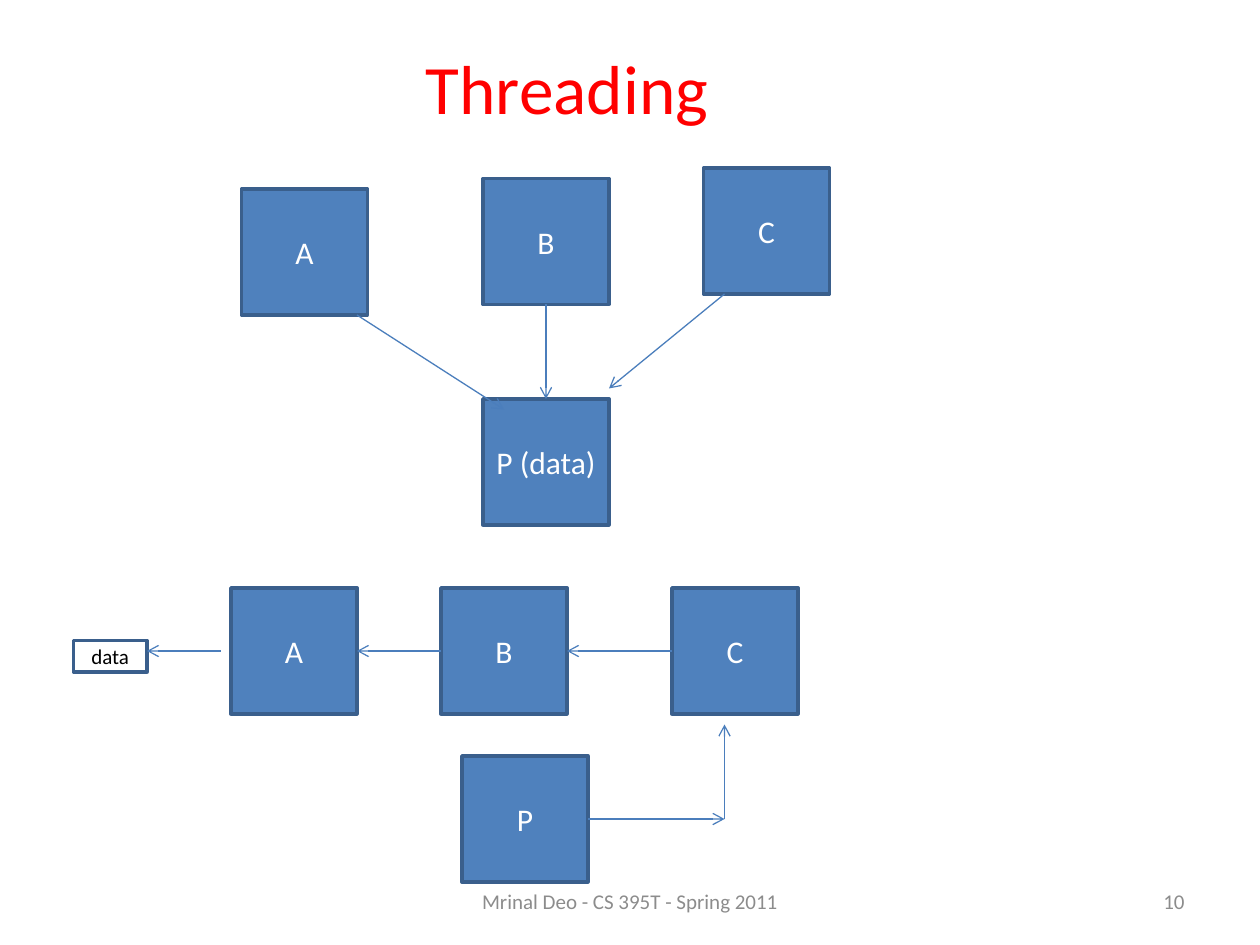
from lxml import etree
from pptx import Presentation
from pptx.dml.color import RGBColor
from pptx.enum import shapes, text
from pptx.oxml import ns
from pptx.util import Pt

LABELS = [
    ("Threading", (36, 21.6, 576, 56), 39.6, "FF0000", text.PP_ALIGN.CENTER),
    ("Mrinal Deo - CS 395T - Spring 2011", (246, 500.4, 228, 28.8), 12, "8C8C8C", text.PP_ALIGN.CENTER),
    ("10", (516, 500.4, 168, 28.8), 12, "8C8C8C", text.PP_ALIGN.RIGHT),
]
SIDE = 72
NODES = [
    ("A", 138, 108), ("B", 276, 102), ("C", 402, 96), ("P (data)", 276, 228),
    ("A", 132, 336), ("B", 252, 336), ("C", 384, 336), ("P", 264, 432),
]
DATA_BOX = (42, 366, 42, 18)
ARROWS = [
    (204, 180, 288, 234), (312, 174, 312, 228), (414, 168, 348, 222),
    (126, 372, 84, 372), (252, 372, 204, 372), (384, 372, 324, 372),
    (336, 468, 414, 468), (414, 468, 414, 414),
]


def color(value):
    return RGBColor.from_string(value)


def write(box, words, size, ink, align):
    frame = box.text_frame
    frame.text = words
    frame.word_wrap = True
    frame.vertical_anchor = text.MSO_ANCHOR.MIDDLE
    para = frame.paragraphs[0]
    para.alignment = align
    font = para.runs[0].font
    font.name, font.size = "Calibri", Pt(size)
    font.color.rgb = color(ink)


def add_label(page, words, place, size, ink, align):
    box = page.shapes.add_textbox(*map(Pt, place))
    write(box, words, size, ink, align)


def add_node(page, words, place, size=18, fill="4F81BD", ink="FFFFFF"):
    box = page.shapes.add_shape(shapes.MSO_SHAPE.RECTANGLE, *map(Pt, place))
    box.shadow.inherit = False
    box.fill.solid()
    box.fill.fore_color.rgb = color(fill)
    box.line.color.rgb = color("3A5F8C")
    box.line.width = Pt(2)
    box.text_frame.margin_left = box.text_frame.margin_right = Pt(3)
    write(box, words, size, ink, text.PP_ALIGN.CENTER)


def add_arrow(page, ends):
    arrow = page.shapes.add_connector(shapes.MSO_CONNECTOR.STRAIGHT, *map(Pt, ends))
    arrow.line.color.rgb = color("4B7EBC")
    arrow.line.width = Pt(0.75)
    properties = arrow.element.spPr
    line = properties.find(ns.qn("a:ln"))
    etree.SubElement(line, ns.qn("a:tailEnd"), type="arrow")
    etree.SubElement(properties, ns.qn("a:effectLst"))


def main():
    deck = Presentation()
    deck.slide_width, deck.slide_height = Pt(720), Pt(540)
    page = deck.slides.add_slide(deck.slide_layouts[6])
    for label in LABELS:
        add_label(page, *label)
    for name, left, top in NODES:
        add_node(page, name, (left, top, SIDE, SIDE))
    add_node(page, "data", DATA_BOX, 12, "FFFFFF", "000000")
    for ends in ARROWS:
        add_arrow(page, ends)
    deck.save("out.pptx")


if __name__ == "__main__":
    main()
